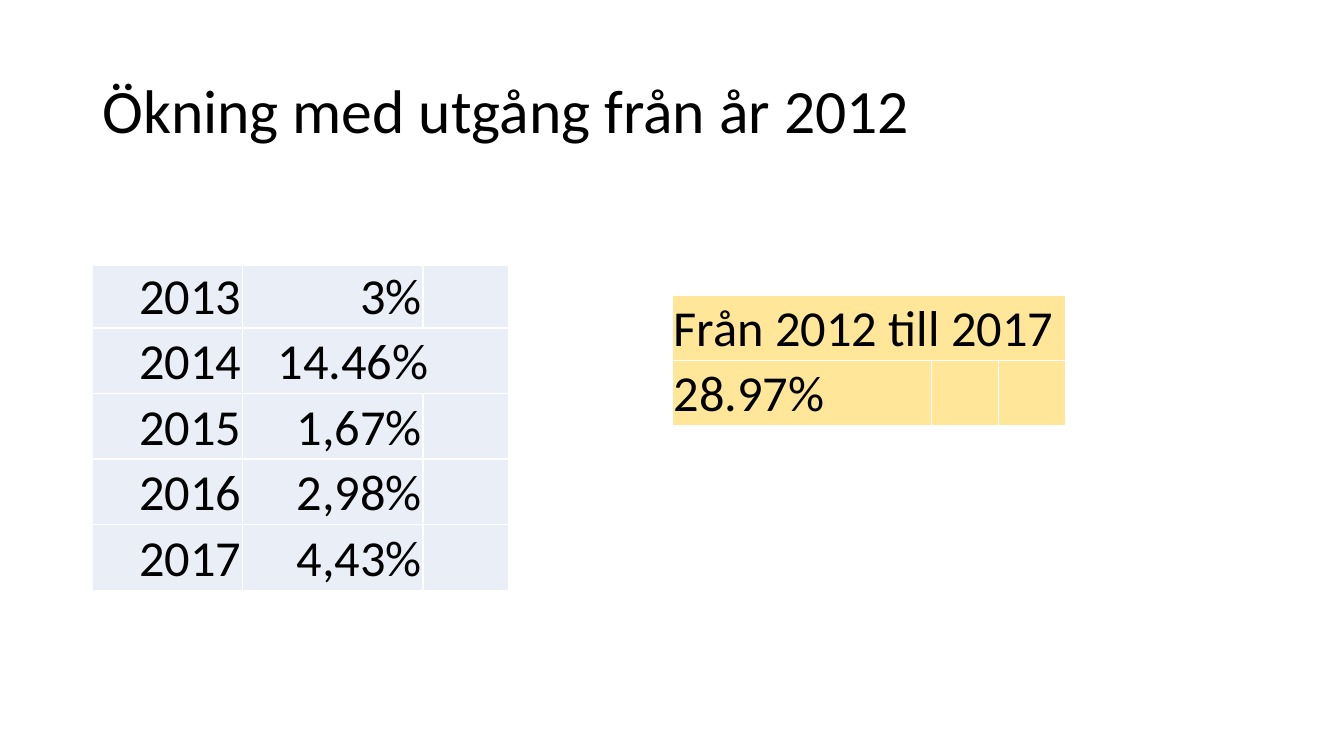
"""Builds a slide with yearly increases and the total increase since 2012."""
from dataclasses import dataclass

import lxml.etree
import pptx
import pptx.dml.color
import pptx.enum.text
import pptx.oxml.ns
import pptx.util

Pt = pptx.util.Pt
ALIGN = pptx.enum.text.PP_ALIGN
ANCHOR = pptx.enum.text.MSO_ANCHOR


@dataclass(frozen=True)
class Entry:
    text: str = ""
    align: ALIGN = ALIGN.LEFT
    indent: float = 0.75
    span: int = 1


@dataclass(frozen=True)
class Grid:
    left: float
    top: float
    widths: list[float]
    heights: list[float]
    fill: str
    rows: list[list[Entry]]


def color(value: str) -> pptx.dml.color.RGBColor:
    return pptx.dml.color.RGBColor.from_string(value)


def write(frame, text: str, *, size: float, align: ALIGN = ALIGN.LEFT,
          spacing: float = 1.0, ink: str = "000000", font: str = "Calibri") -> None:
    paragraph = frame.paragraphs[0]
    paragraph.alignment = align
    paragraph.line_spacing = spacing
    run = paragraph.add_run()
    run.text = text
    run.font.size = Pt(size)
    run.font.name = font
    run.font.color.rgb = color(ink)


def add_borders(cell, ink: str = "FFFFFF", width: float = 1) -> None:
    properties = cell._tc.get_or_add_tcPr()
    qn = pptx.oxml.ns.qn
    for position, side in enumerate(("lnL", "lnR", "lnT", "lnB")):
        line = lxml.etree.Element(qn(f"a:{side}"), w=str(Pt(width)))
        solid = lxml.etree.SubElement(line, qn("a:solidFill"))
        lxml.etree.SubElement(solid, qn("a:srgbClr"), val=ink)
        properties.insert(position, line)


def add_grid(slide, grid: Grid) -> None:
    table = slide.shapes.add_table(
        len(grid.heights), len(grid.widths), Pt(grid.left), Pt(grid.top),
        Pt(sum(grid.widths)), Pt(sum(grid.heights))).table
    table.first_row = False
    table.horz_banding = False
    for column, width in zip(table.columns, grid.widths):
        column.width = Pt(width)
    for row, height in zip(table.rows, grid.heights):
        row.height = Pt(height)
    for cell in table.iter_cells():
        cell.fill.solid()
        cell.fill.fore_color.rgb = color(grid.fill)
        add_borders(cell)
    for row_index, entries in enumerate(grid.rows):
        for column_index, entry in enumerate(entries):
            cell = table.cell(row_index, column_index)
            if entry.span > 1:
                cell.merge(table.cell(row_index, column_index + entry.span - 1))
            cell.vertical_anchor = ANCHOR.BOTTOM
            cell.margin_left = Pt(entry.indent)
            cell.margin_right = cell.margin_top = Pt(0.75)
            cell.margin_bottom = Pt(0)
            write(cell.text_frame, entry.text, size=36, align=entry.align)


def yearly(year: str, increase: Entry) -> list[Entry]:
    return [Entry(year, ALIGN.RIGHT), increase]


YEARLY_INCREASE = Grid(
    66, 189.5, [107.3, 128.9, 61.2], [42.5] + [46.8] * 4, "EAEFF7",
    [yearly("2013", Entry("3%", ALIGN.RIGHT)),
     yearly("2014", Entry("14.46%", indent=25, span=2)),
     yearly("2015", Entry("1,67%", ALIGN.RIGHT)),
     yearly("2016", Entry("2,98%", ALIGN.RIGHT)),
     yearly("2017", Entry("4,43%", ALIGN.RIGHT))])

TOTAL_INCREASE = Grid(
    480.5, 211, [184.8, 48, 48], [46.5] * 2, "FFE699",
    [[Entry("Från 2012 till 2017", span=3)], [Entry("28.97%")]])


def main() -> None:
    presentation = pptx.Presentation()
    presentation.slide_width = Pt(960)
    presentation.slide_height = Pt(540)
    slide = presentation.slides.add_slide(presentation.slide_layouts[5])

    heading = slide.shapes.title
    heading.left, heading.top = Pt(66), Pt(28.75)
    heading.width, heading.height = Pt(828), Pt(104.4)
    heading.text_frame.auto_size = pptx.enum.text.MSO_AUTO_SIZE.NONE
    heading.text_frame.vertical_anchor = ANCHOR.MIDDLE
    write(heading.text_frame, "Ökning med utgång från år 2012", size=44, spacing=0.9)

    for grid in (YEARLY_INCREASE, TOTAL_INCREASE):
        add_grid(slide, grid)
    presentation.save("out.pptx")


if __name__ == "__main__":
    main()
